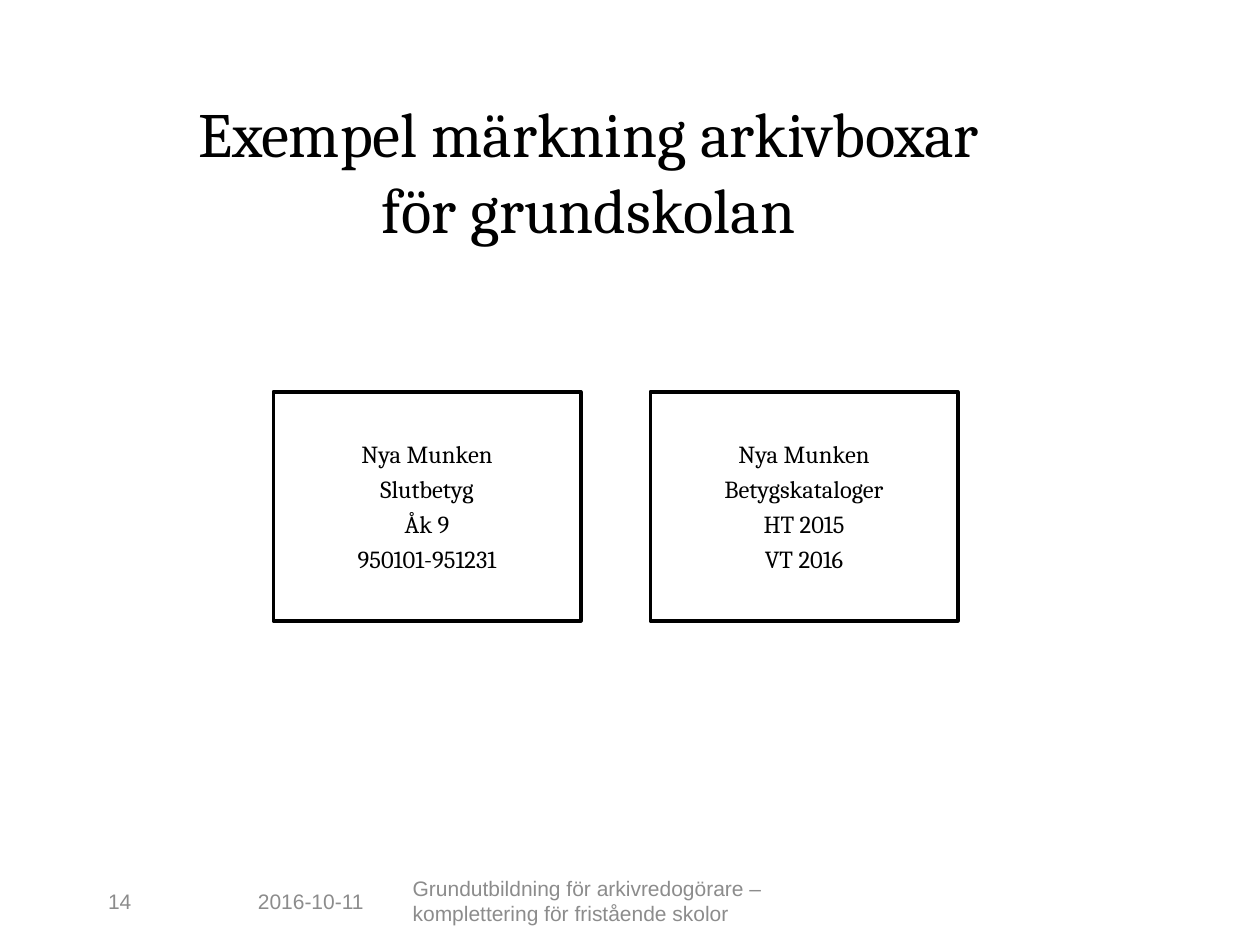
from pptx import Presentation
from pptx.dml.color import RGBColor
from pptx.enum import shapes, text
from pptx.util import Cm, Pt

COLORS = {"ink": "000000", "footer": "8C8C8C"}
LABELS = [
    ["Nya Munken", "Slutbetyg", "Åk 9", "950101-951231"],
    ["Nya Munken", "Betygskataloger", "HT 2015", "VT 2016"],
]
FOOTER = [
    ("14", 3.02),
    ("2016-10-11", 3.12),
    ("Grundutbildning för arkivredogörare – komplettering för fristående skolor", 10.03),
]


def rgb(name):
    return RGBColor.from_string(COLORS[name])


def fill_text(sp, content, font, size, color, align, anchor, wrap=True, gap=0):
    tf = sp.text_frame
    tf.text = content
    tf.word_wrap = wrap
    tf.vertical_anchor = anchor
    for i, p in enumerate(tf.paragraphs):
        p.alignment = align
        if i and gap:
            p.space_before = Pt(gap)
        for r in p.runs:
            r.font.name = font
            r.font.size = Pt(size)
            r.font.color.rgb = rgb(color)


def add_title(s, left, top, width, height):
    sp = s.shapes.add_textbox(Cm(left), Cm(top), Cm(width), Cm(height))
    fill_text(sp, "Exempel märkning arkivboxar\vför grundskolan", "Cambria", 36, "ink",
              text.PP_ALIGN.CENTER, text.MSO_ANCHOR.TOP)


def add_labels(s, left, top, width, height, gap):
    label_width = (width - gap * (len(LABELS) - 1)) / len(LABELS)
    for i, lines in enumerate(LABELS):
        sp = s.shapes.add_shape(shapes.MSO_SHAPE.RECTANGLE, Cm(left + i * (label_width + gap)),
                                Cm(top), Cm(label_width), Cm(height))
        sp.shadow.inherit = False
        sp.fill.background()
        sp.line.color.rgb = rgb("ink")
        sp.line.width = Pt(2)
        fill_text(sp, "\n".join(lines), "Cambria", 14, "ink", text.PP_ALIGN.CENTER,
                  text.MSO_ANCHOR.MIDDLE, wrap=False, gap=3.2)


def add_footer(s, left, top, height):
    for content, width in FOOTER:
        sp = s.shapes.add_textbox(Cm(left), Cm(top), Cm(width), Cm(height))
        fill_text(sp, content, "Arial", 12, "footer", text.PP_ALIGN.LEFT,
                  text.MSO_ANCHOR.MIDDLE)
        left += width


def main():
    prs = Presentation()
    prs.slide_width, prs.slide_height = Cm(25.4), Cm(19.05)
    s = prs.slides.add_slide(prs.slide_layouts[6])
    add_title(s, 2.01, 1.78, 19.71, 2.16)
    add_labels(s, 5.51, 7.9, 13.8, 4.62, 1.4)
    add_footer(s, 1.93, 17.65, 1.02)
    prs.save("out.pptx")


if __name__ == "__main__":
    main()
